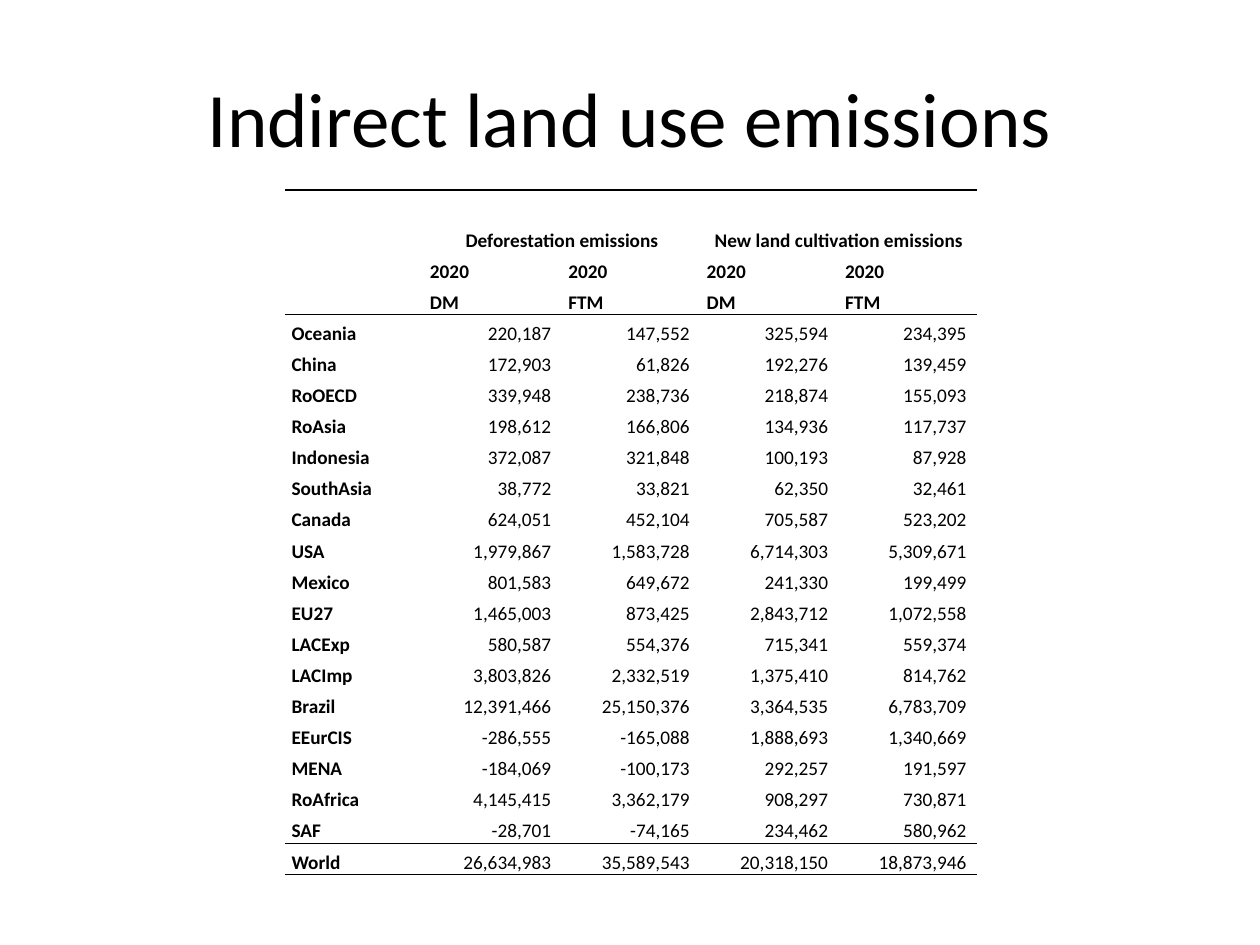
from dataclasses import dataclass

from lxml import etree
from pptx import Presentation
from pptx import util as u
from pptx.dml import color
from pptx.enum import text
from pptx.oxml import ns

Pt = u.Pt
LEFT, MID, RIGHT = text.PP_ALIGN.LEFT, text.PP_ALIGN.CENTER, text.PP_ALIGN.RIGHT


@dataclass(frozen=True)
class Theme:
    font: str = "Calibri"
    ink: str = "000000"
    title: float = 44
    body: float = 11
    rule: float = 1
    lead: float = 1.15


THEME = Theme()

GROUPS = ["Deforestation emissions", "New land cultivation emissions"]
HEADS = [["2020"] * 4, ["DM", "FTM"] * 2]
ROWS = [
    ("Oceania", 220187, 147552, 325594, 234395),
    ("China", 172903, 61826, 192276, 139459),
    ("RoOECD", 339948, 238736, 218874, 155093),
    ("RoAsia", 198612, 166806, 134936, 117737),
    ("Indonesia", 372087, 321848, 100193, 87928),
    ("SouthAsia", 38772, 33821, 62350, 32461),
    ("Canada", 624051, 452104, 705587, 523202),
    ("USA", 1979867, 1583728, 6714303, 5309671),
    ("Mexico", 801583, 649672, 241330, 199499),
    ("EU27", 1465003, 873425, 2843712, 1072558),
    ("LACExp", 580587, 554376, 715341, 559374),
    ("LACImp", 3803826, 2332519, 1375410, 814762),
    ("Brazil", 12391466, 25150376, 3364535, 6783709),
    ("EEurCIS", -286555, -165088, 1888693, 1340669),
    ("MENA", -184069, -100173, 292257, 191597),
    ("RoAfrica", 4145415, 3362179, 908297, 730871),
    ("SAF", -28701, -74165, 234462, 580962),
    ("World", 26634983, 35589543, 20318150, 18873946),
]


def write(frame, words, size=THEME.body, bold=False, align=LEFT, lead=None):
    """Put one formatted paragraph into a text frame."""
    para = frame.paragraphs[0]
    para.alignment = align
    para.line_spacing = lead
    run = para.add_run()
    run.text = words
    run.font.name = THEME.font
    run.font.size = Pt(size)
    run.font.bold = bold
    run.font.color.rgb = color.RGBColor.from_string(THEME.ink)


def edge(cell, side, shown):
    """Draw or clear one border of a cell."""
    line = etree.SubElement(cell._tc.get_or_add_tcPr(), ns.qn("a:ln" + side))
    if shown:
        line.set("w", str(Pt(THEME.rule)))
        fill = etree.SubElement(line, ns.qn("a:solidFill"))
        etree.SubElement(fill, ns.qn("a:srgbClr"), val=THEME.ink)
    else:
        etree.SubElement(line, ns.qn("a:noFill"))


def dress(cell, top, base):
    """Set margins, anchor, borders and fill of a cell."""
    cell.margin_left = cell.margin_right = Pt(3.6)
    cell.margin_top = cell.margin_bottom = 0
    cell.vertical_anchor = text.MSO_ANCHOR.BOTTOM
    for side, shown in (("L", False), ("R", False), ("T", top), ("B", base)):
        edge(cell, side, shown)
    cell.fill.background()
    if not cell.text_frame.text:
        # Keep empty cells from stretching their row
        para = cell.text_frame.paragraphs[0]._p
        etree.SubElement(para, ns.qn("a:endParaRPr"), sz=str(THEME.body * 100))


def add_title(slide, left, top, width, height):
    frame = slide.shapes.add_textbox(Pt(left), Pt(top), Pt(width), Pt(height)).text_frame
    frame.word_wrap = True
    frame.vertical_anchor = text.MSO_ANCHOR.MIDDLE
    write(frame, "Indirect land use emissions", size=THEME.title, align=MID)


def add_grid(slide, left, top, width, height):
    first = 1 + len(HEADS)
    count, cols = first + len(ROWS), len(ROWS[0])
    table = slide.shapes.add_table(
        count, cols, Pt(left), Pt(top), Pt(width), Pt(height)).table
    table.first_row = table.horz_banding = False

    # Equal columns; the group row is twice as high as the others
    pitch = height / (count + 1)
    for col in table.columns:
        col.width = Pt(width / cols)
    for r, row in enumerate(table.rows):
        row.height = Pt(pitch * (2 if r == 0 else 1))

    # Column heads
    for g, name in enumerate(GROUPS):
        c = 1 + 2 * g
        table.cell(0, c).merge(table.cell(0, c + 1))
        write(table.cell(0, c).text_frame, name, bold=True, align=MID, lead=THEME.lead)
    for r, heads in enumerate(HEADS, 1):
        for c, head in enumerate(heads, 1):
            write(table.cell(r, c).text_frame, head, bold=True, lead=THEME.lead)

    # Regions and values
    for r, (name, *values) in enumerate(ROWS, first):
        write(table.cell(r, 0).text_frame, name, bold=True, lead=THEME.lead)
        for c, value in enumerate(values, 1):
            write(table.cell(r, c).text_frame, f"{value:,} ", align=RIGHT, lead=THEME.lead)

    # Rules around the heads and the total
    rules = {0, first, count - 1, count}
    for r in range(count):
        for c in range(cols):
            dress(table.cell(r, c), r in rules, r + 1 in rules)


def main():
    deck = Presentation()
    deck.slide_width, deck.slide_height = Pt(720), Pt(540)
    slide = deck.slides.add_slide(deck.slide_layouts[6])
    add_title(slide, 36, 21.6, 648, 90)
    add_grid(slide, 163, 108.6, 395.5, 391.6)
    deck.save("out.pptx")


if __name__ == "__main__":
    main()
